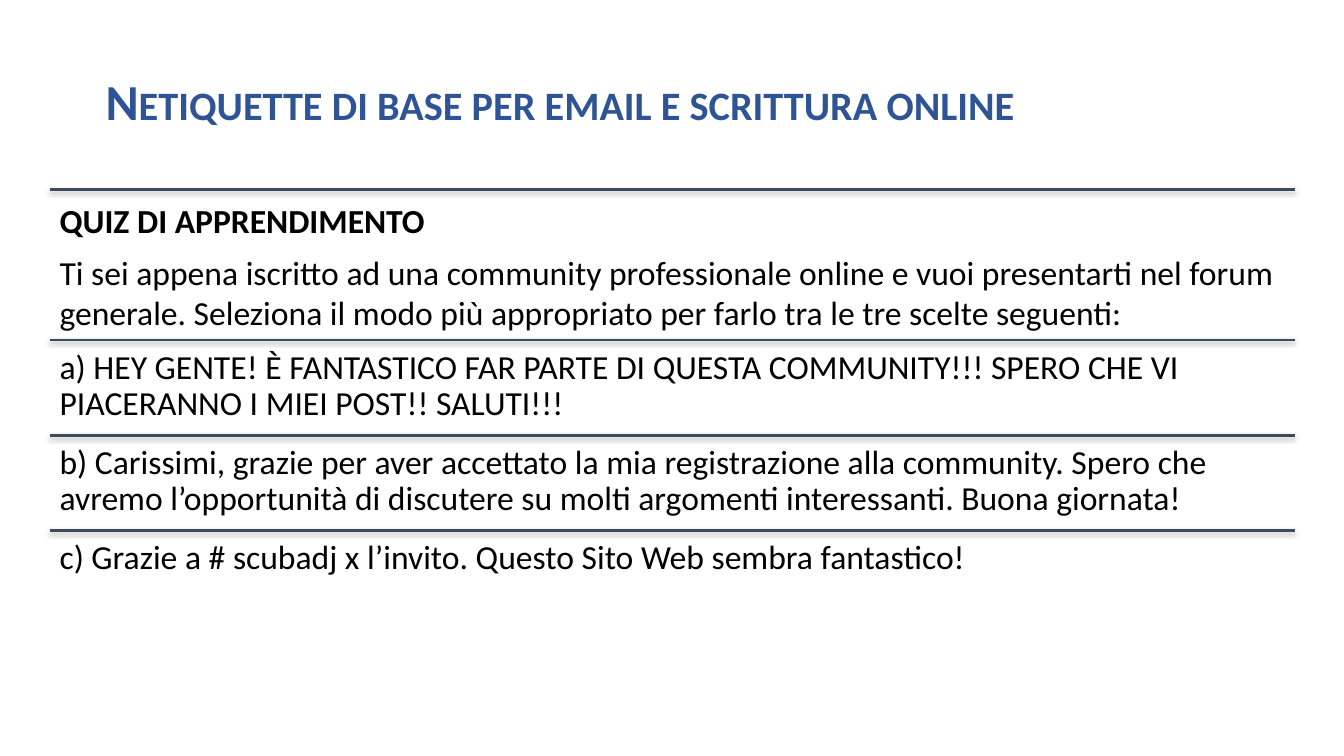
from dataclasses import dataclass

from lxml.etree import SubElement
from pptx import Presentation
from pptx.dml.color import RGBColor
from pptx.enum.shapes import MSO_CONNECTOR
from pptx.enum.text import MSO_ANCHOR, MSO_AUTO_SIZE, PP_ALIGN
from pptx.oxml.ns import qn
from pptx.shapes.connector import Connector
from pptx.slide import Slide
from pptx.text.text import TextFrame, _Paragraph
from pptx.util import Pt


@dataclass(frozen=True)
class Theme:
    face: str = "Calibri"
    title: str = "2F5496"
    ink: str = "000000"
    rule: str = "3D4B5F"
    shade: str = "000000"
    head: float = 36
    body: float = 24


@dataclass(frozen=True)
class Line:
    text: str
    bold: bool = False
    before: float = 0


@dataclass(frozen=True)
class Row:
    height: float
    lines: tuple[Line, ...]
    spacing: float = 0.9


THEME = Theme()
LEFT, TOP, WIDTH = 35.5, 135.5, 889.5
CHOICE = 68

ROWS = (
    Row(107.4, (
        Line("QUIZ DI APPRENDIMENTO", bold=True),
        Line("Ti sei appena iscritto ad una community professionale online e vuoi "
             "presentarti nel forum generale. Seleziona il modo più appropriato "
             "per farlo tra le tre scelte seguenti:", before=8.4),
    ), spacing=1.0),
    Row(CHOICE, (Line("a) HEY GENTE! È FANTASTICO FAR PARTE DI QUESTA COMMUNITY!!! "
                      "SPERO CHE VI PIACERANNO I MIEI POST!! SALUTI!!!"),)),
    Row(CHOICE, (Line("b) Carissimi, grazie per aver accettato la mia registrazione alla "
                      "community. Spero che avremo l’opportunità di discutere su molti "
                      "argomenti interessanti. Buona giornata!"),)),
    Row(CHOICE, (Line("c) Grazie a # scubadj x l’invito. Questo Sito Web sembra "
                      "fantastico!"),)),
)


def set_font(para: _Paragraph, size: float, color: str, bold: bool) -> None:
    font = para.font
    font.name, font.size, font.bold = THEME.face, Pt(size), bold
    font.color.rgb = RGBColor.from_string(color)


def set_frame(frame: TextFrame, side: float, edge: float, anchor: MSO_ANCHOR) -> None:
    frame.word_wrap = True
    frame.auto_size = MSO_AUTO_SIZE.NONE
    frame.vertical_anchor = anchor
    frame.margin_left = frame.margin_right = Pt(side)
    frame.margin_top = frame.margin_bottom = Pt(edge)


def add_title(slide: Slide, text: str) -> None:
    title = slide.shapes.title
    title.left, title.top = Pt(66), Pt(22.5)
    title.width, title.height = Pt(828), Pt(104.4)
    set_frame(title.text_frame, 9.4, 5, MSO_ANCHOR.MIDDLE)
    para = title.text_frame.paragraphs[0]
    para.alignment, para.line_spacing = PP_ALIGN.LEFT, 0.9
    run = para.add_run()
    run.text = text
    run._r.get_or_add_rPr().set("cap", "small")
    set_font(para, THEME.head, THEME.title, True)


def add_shadow(line: Connector) -> None:
    effects = SubElement(line._element.spPr, qn("a:effectLst"))
    shadow = SubElement(effects, qn("a:outerShdw"), blurRad=str(Pt(3.1)),
                        dist=str(Pt(1.6)), dir="5400000", rotWithShape="0")
    color = SubElement(shadow, qn("a:srgbClr"), val=THEME.shade)
    SubElement(color, qn("a:alpha"), val="38000")


def add_row(slide: Slide, row: Row, top: float) -> None:
    """Draw a rule with the row's text below it."""
    rule = slide.shapes.add_connector(
        MSO_CONNECTOR.STRAIGHT, Pt(LEFT), Pt(top), Pt(LEFT + WIDTH), Pt(top))
    rule.line.color.rgb = RGBColor.from_string(THEME.rule)
    rule.line.width = Pt(2)
    add_shadow(rule)

    box = slide.shapes.add_textbox(Pt(LEFT), Pt(top), Pt(WIDTH), Pt(row.height))
    frame = box.text_frame
    set_frame(frame, 7.2, 7.2, MSO_ANCHOR.TOP)
    for i, line in enumerate(row.lines):
        para = frame.add_paragraph() if i else frame.paragraphs[0]
        para.text = line.text
        para.line_spacing, para.space_before = row.spacing, Pt(line.before)
        set_font(para, THEME.body, THEME.ink, line.bold)


def main() -> None:
    deck = Presentation()
    deck.slide_width, deck.slide_height = Pt(960), Pt(540)
    slide = deck.slides.add_slide(deck.slide_layouts[5])
    add_title(slide, "Netiquette di base per email e scrittura online")
    top = TOP
    for row in ROWS:
        add_row(slide, row, top)
        top += row.height
    deck.save("out.pptx")


if __name__ == "__main__":
    main()
